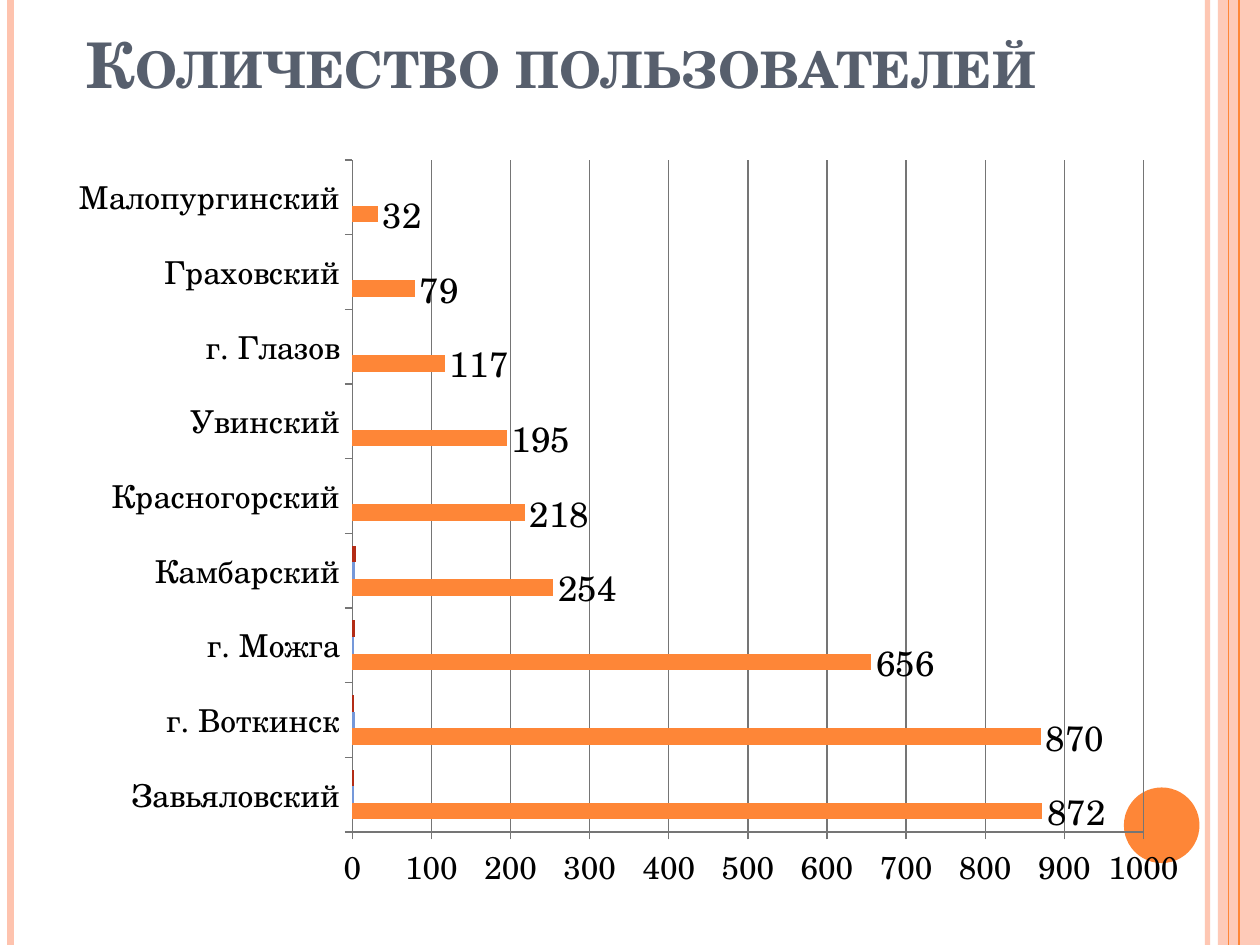
from pptx import Presentation
from pptx.util import Pt
from pptx.dml.color import RGBColor
from pptx.chart.data import CategoryChartData
from pptx.enum.chart import XL_CHART_TYPE, XL_LABEL_POSITION, XL_TICK_MARK
from pptx.enum.shapes import MSO_CONNECTOR, MSO_SHAPE
from pptx.enum.text import MSO_ANCHOR
from pptx.oxml import parse_xml
from pptx.oxml.ns import qn
from lxml.etree import SubElement

FACE = "TeX Gyre Schola"
PINK, ORANGE = "FEC3AE", "FE8637"


def paint(fill, color, alpha=100):
    fill.solid()
    fill.fore_color.rgb = RGBColor.from_string(color)
    if alpha < 100:
        tone = fill._xPr.find(qn("a:solidFill"))[0]
        SubElement(tone, qn("a:alpha"), val=str(alpha * 1000))


prs = Presentation()
prs.slide_width, prs.slide_height = Pt(720), Pt(540)
slide = prs.slides.add_slide(prs.slide_layouts[6])
shapes = slide.shapes

# Side band
band = shapes.add_shape(MSO_SHAPE.RECTANGLE, Pt(696), 0, Pt(24), Pt(540))
band.shadow.inherit = False
paint(band.fill, PINK, 87)
band.line.fill.background()

# Vertical stripes
for x, color, width, alpha in [
    (690, PINK, 3, 93),
    (6, PINK, 4.5, 100),
    (708, ORANGE, 1.5, 100),
    (702, ORANGE, 0.75, 100),
]:
    stripe = shapes.add_connector(MSO_CONNECTOR.STRAIGHT, Pt(x), 0, Pt(x), Pt(540))
    stripe.line.width = Pt(width)
    paint(stripe.line.fill, color, alpha)
    SubElement(stripe._element.spPr, qn("a:effectLst"))

# Corner disc
disc = shapes.add_shape(MSO_SHAPE.OVAL, Pt(642.24), Pt(450), Pt(43.2), Pt(43.2))
disc.shadow.inherit = False
paint(disc.fill, ORANGE)
disc.line.fill.background()

# Title
title = shapes.add_textbox(Pt(42.5), 0, Pt(600), Pt(61.2))
frame = title.text_frame
frame.word_wrap = True
frame.vertical_anchor = MSO_ANCHOR.BOTTOM
run = frame.paragraphs[0].add_run()
run.text = "Количество пользователей"
run.font.name, run.font.size, run.font.bold = FACE, Pt(36), True
run.font.color.rgb = RGBColor.from_string("575F6D")
run._r.get_or_add_rPr().set("cap", "small")

# Chart data
data = CategoryChartData()
data.categories = [
    "Завьяловский", "г. Воткинск", "г. Можга", "Камбарский", "Красногорский",
    "Увинский", "г. Глазов", "Граховский", "Малопургинский",
]
blank = [None] * 5
data.add_series("Series 1", [872, 870, 656, 254, 218, 195, 117, 79, 32])
data.add_series("Series 2", [2, 4, 2, 3] + blank)
data.add_series("Series 3", [2, 2, 3, 5] + blank)

# Bar chart
chart = shapes.add_chart(
    XL_CHART_TYPE.BAR_CLUSTERED, Pt(31), Pt(82.8), Pt(655.2), Pt(436.3), data
).chart
chart.has_legend = chart.has_title = False
chart.font.name, chart.font.size = FACE, Pt(18)
chart.font.color.rgb = RGBColor.from_string("000000")
plot = chart.plots[0]
plot.gap_width, plot.overlap = 150, 0
plot.vary_by_categories = False
for row, color in zip(plot.series, [ORANGE, "7598D9", "B32C16"]):
    paint(row.format.fill, color)
    row.invert_if_negative = False

# Value labels
labels = plot.series[0].data_labels
labels.show_value = True
labels.position = XL_LABEL_POSITION.OUTSIDE_END
labels.font.name, labels.font.size = FACE, Pt(20)

# Axes and grid
scale = chart.value_axis
scale.minimum_scale, scale.maximum_scale, scale.major_unit = 0, 1000, 100
scale.has_major_gridlines = True
for axis in (scale, chart.category_axis):
    axis.major_tick_mark = XL_TICK_MARK.OUTSIDE
    axis.minor_tick_mark = XL_TICK_MARK.NONE
for part in (scale, chart.category_axis, scale.major_gridlines):
    paint(part.format.line.fill, "757575")
    part.format.line.width = Pt(0.75)

# Plot area place, as shares of the chart
area = chart._chartSpace.chart.plotArea
for old in area.findall(qn("c:layout")):
    area.remove(old)
layout = parse_xml(
    '<c:layout xmlns:c="http://schemas.openxmlformats.org/drawingml/2006/chart"/>'
)
area.insert(0, layout)
place = SubElement(layout, qn("c:manualLayout"))
for tag, val in [
    ("layoutTarget", "inner"), ("xMode", "edge"), ("yMode", "edge"),
    ("x", "0.26"), ("y", "0.02"), ("w", "0.69"), ("h", "0.88"),
]:
    SubElement(place, qn("c:" + tag), val=val)

prs.save("out.pptx")
